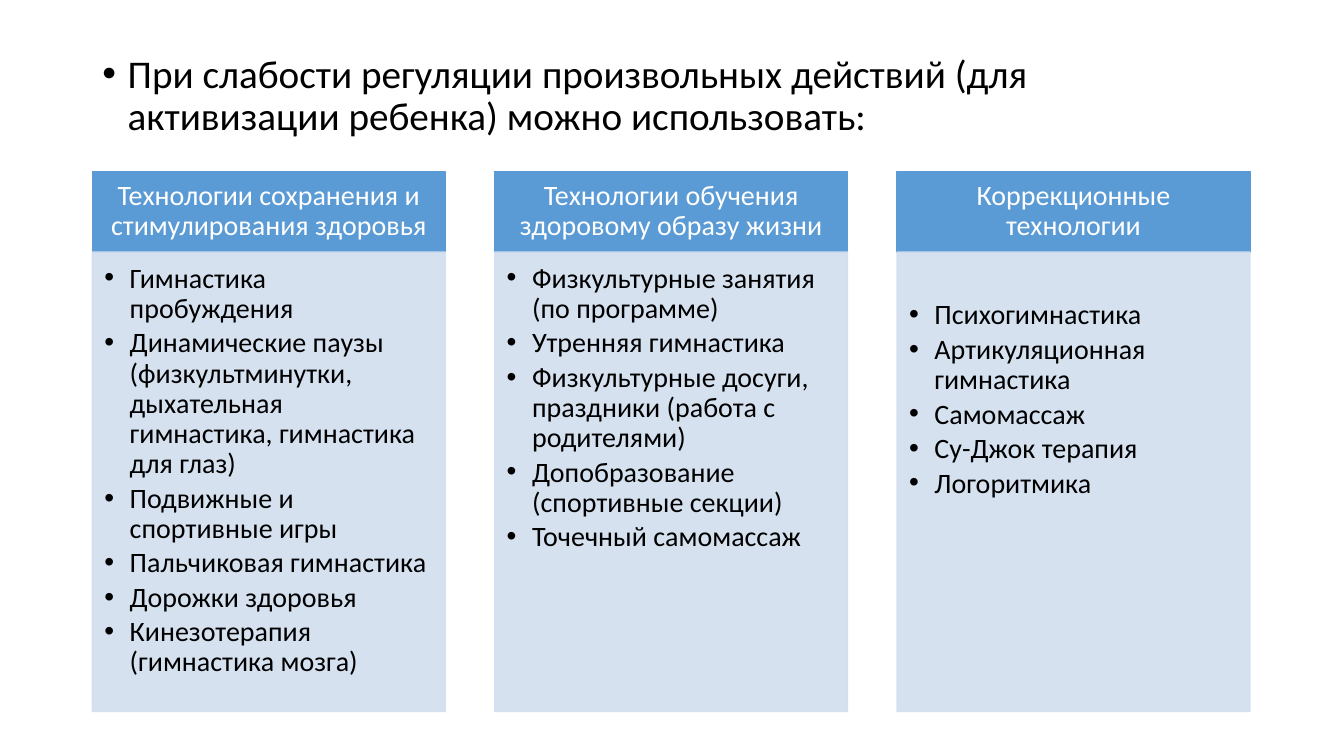
"""Build a slide with three columns of health technologies for children."""
from collections import namedtuple

from lxml.etree import SubElement
from pptx import Presentation
from pptx.dml.color import RGBColor
from pptx.enum.shapes import MSO_SHAPE
from pptx.enum.text import MSO_ANCHOR, PP_ALIGN
from pptx.oxml.ns import qn
from pptx.util import Cm, Pt

Theme = namedtuple("Theme", "font lead_size card_size ink white header body body_alpha")
theme = Theme(
    font="Calibri",
    lead_size=Pt(28),
    card_size=Pt(20),
    ink=RGBColor.from_string("000000"),
    white=RGBColor.from_string("FFFFFF"),
    header=RGBColor.from_string("5B9BD5"),
    body=RGBColor.from_string("D2DEEF"),
    body_alpha=90,
)

LEAD = ("При слабости регуляции произвольных действий "
        "(для активизации ребенка) можно использовать:")
LEFT, PITCH, WIDTH = 2.33, 10.14, 8.89
HEADER_TOP, HEADER_HEIGHT, BODY_HEIGHT = 4.32, 2.03, 11.58
HEADER_INSETS = (0.41, 0.23, 0.41, 0.23)

columns = [
    ("Технологии сохранения и стимулирования здоровья", 0.3, [
        "Гимнастика пробуждения",
        "Динамические паузы (физкультминутки, дыхательная гимнастика, "
        "гимнастика для глаз)",
        "Подвижные и спортивные игры",
        "Пальчиковая гимнастика",
        "Дорожки здоровья",
        "Кинезотерапия (гимнастика мозга)",
    ]),
    ("Технологии обучения здоровому образу жизни", 0.3, [
        "Физкультурные занятия (по программе)",
        "Утренняя гимнастика",
        "Физкультурные досуги, праздники (работа с родителями)",
        "Допобразование (спортивные секции)",
        "Точечный самомассаж",
    ]),
    ("Коррекционные технологии", 1.23, [
        "Психогимнастика",
        "Артикуляционная гимнастика",
        "Самомассаж",
        "Су-Джок терапия",
        "Логоритмика",
    ]),
]


def add_card(left, top, height, color, insets, anchor):
    """Add a filled rectangle ready for text."""
    card = page.shapes.add_shape(
        MSO_SHAPE.RECTANGLE, Cm(left), Cm(top), Cm(WIDTH), Cm(height))
    card.shadow.inherit = False
    card.fill.solid()
    card.fill.fore_color.rgb = color
    card.line.color.rgb = color
    card.line.width = Pt(1)
    frame = card.text_frame
    frame.word_wrap = True
    frame.vertical_anchor = anchor
    (frame.margin_left, frame.margin_top,
     frame.margin_right, frame.margin_bottom) = map(Cm, insets)
    return card


def write(frame, lines, size, color, bulleted):
    """Write each line as a paragraph, bulleted or centred."""
    for index, line in enumerate(lines):
        para = frame.add_paragraph() if index else frame.paragraphs[0]
        para.alignment = PP_ALIGN.LEFT if bulleted else PP_ALIGN.CENTER
        para.line_spacing = 0.9
        para.space_after = Pt(3) if len(lines) > 1 else Pt(0)
        if bulleted:
            props = para._p.get_or_add_pPr()
            props.set("marL", str(Cm(0.64)))
            props.set("indent", str(-Cm(0.64)))
            SubElement(props, qn("a:buFont"), typeface="Arial")
            SubElement(props, qn("a:buChar"), char="•")
        span = para.add_run()
        span.text = line
        span.font.name = theme.font
        span.font.size = size
        span.font.color.rgb = color


deck = Presentation()
deck.slide_width, deck.slide_height = Cm(33.87), Cm(19.05)
page = deck.slides.add_slide(deck.slide_layouts[6])

lead_box = page.shapes.add_textbox(Cm(LEFT), Cm(1.24), Cm(29.21), Cm(15.93))
lead_box.text_frame.word_wrap = True
write(lead_box.text_frame, [LEAD], theme.lead_size, theme.ink, True)

for number, (heading, inset_top, items) in enumerate(columns):
    left = LEFT + number * PITCH
    header = add_card(left, HEADER_TOP, HEADER_HEIGHT, theme.header,
                      HEADER_INSETS, MSO_ANCHOR.MIDDLE)
    write(header.text_frame, [heading], theme.card_size, theme.white, False)

    body = add_card(left, HEADER_TOP + HEADER_HEIGHT, BODY_HEIGHT, theme.body,
                    (0.3, inset_top, 0.41, 0.43), MSO_ANCHOR.TOP)
    for tint in body._element.spPr.iter(qn("a:srgbClr")):
        SubElement(tint, qn("a:alpha"), val=str(theme.body_alpha * 1000))
    write(body.text_frame, items, theme.card_size, theme.ink, True)

deck.save("out.pptx")
